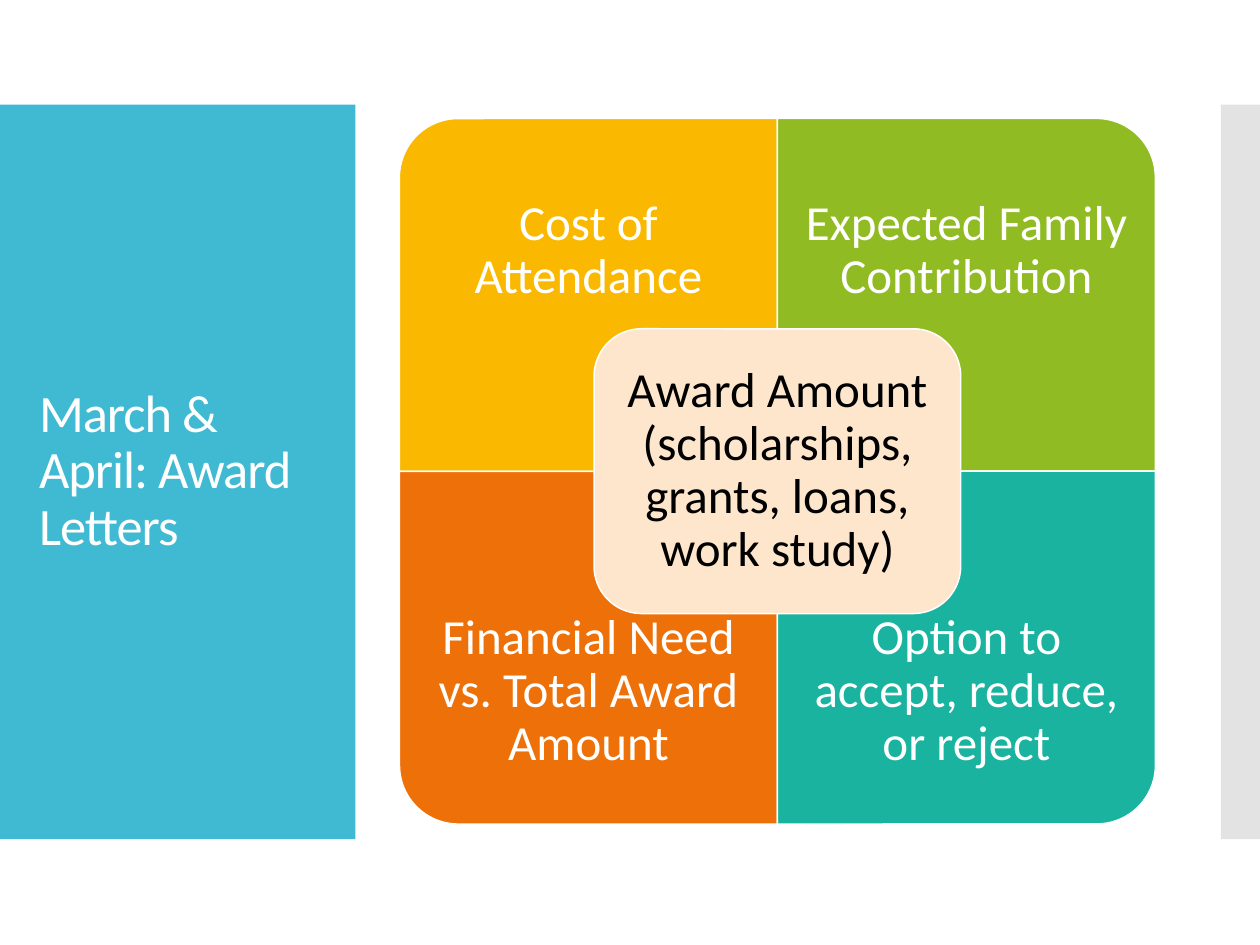
from dataclasses import dataclass

from lxml.etree import SubElement
from pptx import Presentation
from pptx.dml.color import RGBColor
from pptx.enum.shapes import MSO_SHAPE as Shape
from pptx.enum.text import MSO_ANCHOR as Anchor, MSO_AUTO_SIZE as AutoSize, PP_ALIGN as Align
from pptx.oxml.ns import qn
from pptx.util import Inches, Pt


@dataclass(frozen=True)
class Theme:
    font: str = "Calibri"
    title_size: float = 30
    body_size: float = 28
    line_width: float = 0.85
    white: str = "FFFFFF"
    black: str = "000000"
    title_panel: str = "40BAD2"
    edge_panel: str = "C8C8C8"
    cost: str = "FAB900"
    family: str = "90BB23"
    need: str = "EE7008"
    option: str = "1AB39F"
    award: str = "FDE6CC"


THEME = Theme()

# Matrix geometry
LEFT, TOP = 3.17, 0.94
CELL_W, CELL_H = 3, 2.8
LABEL_H = 2.1

# Text, fill, column, row, rotation that turns the round corner outwards
QUADRANTS = [
    ("Cost of Attendance", THEME.cost, 0, 0, 270),
    ("Expected Family Contribution", THEME.family, 1, 0, 0),
    ("Financial Need vs. Total Award Amount", THEME.need, 0, 1, 180),
    ("Option to accept, reduce, or reject", THEME.option, 1, 1, 90),
]


def add_block(s, kind, x, y, w, h, fill, outlined=True):
    sp = s.shapes.add_shape(kind, Inches(x), Inches(y), Inches(w), Inches(h))
    sp.shadow.inherit = False
    sp.fill.solid()
    sp.fill.fore_color.rgb = RGBColor.from_string(fill)
    if outlined:
        sp.line.color.rgb = RGBColor.from_string(THEME.white)
        sp.line.width = Pt(THEME.line_width)
    else:
        sp.line.fill.background()
    return sp


def set_text(sp, text, size, color, align, inset=None):
    tf = sp.text_frame
    tf.text = text
    tf.word_wrap = True
    tf.auto_size = AutoSize.NONE
    tf.vertical_anchor = Anchor.MIDDLE
    if inset is not None:
        tf.margin_left = tf.margin_right = Inches(inset)
        tf.margin_top = tf.margin_bottom = Inches(inset)
    p = tf.paragraphs[0]
    p.alignment = align
    p.line_spacing = 0.9
    r = p.runs[0]
    r.font.name = THEME.font
    r.font.size = Pt(size)
    r.font.color.rgb = RGBColor.from_string(color)
    return r


def add_panels(s):
    add_block(s, Shape.RECTANGLE, 0, 0.83, 2.82, 5.83, THEME.title_panel, outlined=False)
    edge = add_block(s, Shape.RECTANGLE, 9.69, 0.83, 0.32, 5.83, THEME.edge_panel, outlined=False)
    color = edge.fill._xPr.find(qn("a:solidFill"))[0]
    SubElement(color, qn("a:alpha"), val="50000")


def add_title(s, text):
    title = s.shapes.title
    title.left, title.top = Inches(0.21), Inches(1.23)
    title.width, title.height = Inches(2.42), Inches(5.03)
    r = set_text(title, text, THEME.title_size, THEME.white, Align.LEFT)
    r.font._element.set("spc", "-60")
    # Bring the title in front of its panel
    title.element.getparent().append(title.element)


def add_quadrant(s, text, fill, col, row, rotation):
    x, y = LEFT + col * CELL_W, TOP + row * CELL_H
    # A quarter turn swaps width and height about the cell centre
    w, h = (CELL_H, CELL_W) if rotation % 180 else (CELL_W, CELL_H)
    cell = add_block(s, Shape.ROUND_1_RECTANGLE,
                     x + (CELL_W - w) / 2, y + (CELL_H - h) / 2, w, h, fill)
    cell.rotation = rotation
    # Labels sit against the outer edge, clear of the centre
    label_y = y + row * (CELL_H - LABEL_H)
    label = s.shapes.add_textbox(Inches(x), Inches(label_y), Inches(CELL_W), Inches(LABEL_H))
    set_text(label, text, THEME.body_size, THEME.white, Align.CENTER, 0.22)


def add_center(s, text):
    w, h = 2.91, 2.26
    sp = add_block(s, Shape.ROUNDED_RECTANGLE,
                   LEFT + CELL_W - w / 2, TOP + CELL_H - h / 2, w, h, THEME.award)
    set_text(sp, text, THEME.body_size, THEME.black, Align.CENTER, 0.12)


def main():
    prs = Presentation()
    prs.slide_width, prs.slide_height = Inches(10), Inches(7.5)
    s = prs.slides.add_slide(prs.slide_layouts[5])

    # Side panels and title
    add_panels(s)
    add_title(s, "March & April: Award Letters")

    # Matrix with its centre
    for quadrant in QUADRANTS:
        add_quadrant(s, *quadrant)
    add_center(s, "Award Amount (scholarships, grants, loans, work study)")

    prs.save("out.pptx")


if __name__ == "__main__":
    main()
